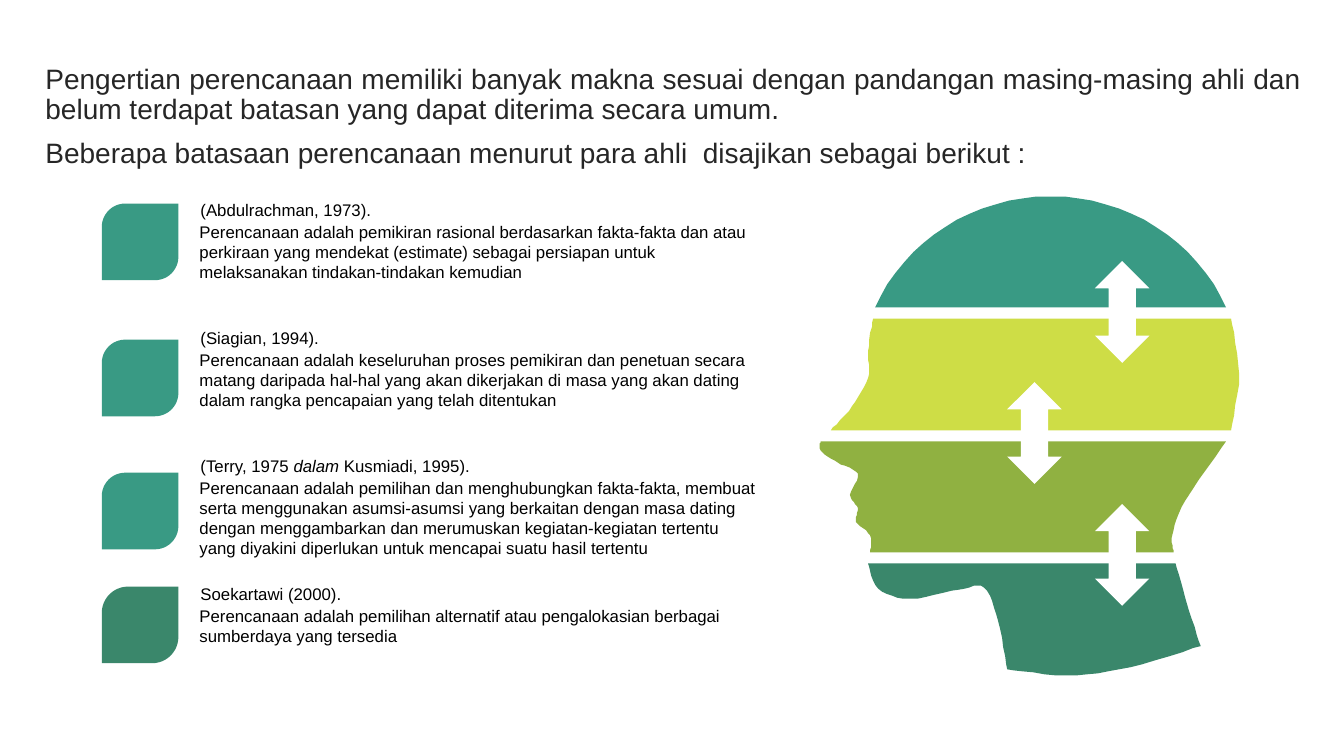
import math
import pptx
import pptx.util
import pptx.dml.color
import pptx.enum.shapes
import pptx.enum.text
import pptx.oxml.ns
import lxml.etree

Inches = pptx.util.Inches
SHAPE = pptx.enum.shapes.MSO_SHAPE

COLORS = {
    "teal": "399A84",
    "lime": "CEDD46",
    "olive": "90B141",
    "green": "3A876B",
    "white": "FFFFFF",
    "intro": "262626",
    "black": "000000",
}

INTRO = [
    "Pengertian perencanaan memiliki banyak makna sesuai dengan pandangan masing-masing ahli dan "
    "belum terdapat batasan yang dapat diterima secara umum.",
    "Beberapa batasaan perencanaan menurut para ahli  disajikan sebagai berikut :",
]

DEFINITIONS = [
    (0.09, "teal", 0.305, [("(Abdulrachman, 1973).", False)],
     "Perencanaan adalah pemikiran rasional berdasarkan fakta-fakta dan atau perkiraan yang mendekat "
     "(estimate) sebagai persiapan untuk melaksanakan tindakan-tindakan kemudian"),
    (0.17, "teal", 0.305, [("(Siagian, 1994).", False)],
     "Perencanaan adalah keseluruhan proses pemikiran dan penetuan secara matang daripada hal-hal yang "
     "akan dikerjakan di masa yang akan dating dalam rangka pencapaian yang telah ditentukan"),
    (0.22, "teal", 0.305,
     [("(Terry, 1975 ", False), ("dalam", True), (" Kusmiadi, 1995).", False)],
     "Perencanaan adalah pemilihan dan menghubungkan fakta-fakta, membuat serta menggunakan asumsi-asumsi "
     "yang berkaitan dengan masa dating dengan menggambarkan dan merumuskan kegiatan-kegiatan tertentu "
     "yang diyakini diperlukan untuk mencapai suatu hasil tertentu"),
    (0.08, "green", 0.343, [("Soekartawi (2000).", False)],
     "Perencanaan adalah pemilihan alternatif atau pengalokasian berbagai sumberdaya yang tersedia"),
]

LOWER_BANDS = [
    ("lime", [
        [(408, 121), (416, 176), (408, 232)],
        [(11, 232), (32, 208), (48, 180), (48, 153), (53, 121)]]),
    ("olive", [
        [(403, 243), (363, 301), (350, 335), (351, 353)],
        [(50, 353), (50, 336), (36, 323), (38, 309), (30, 296), (38, 275), (18, 264), (1, 252),
         (1, 243)]]),
    ("green", [
        [(353, 364), (364, 403), (378, 446)],
        [(378, 446), (308, 467), (245, 475), (186, 469)],
        [(186, 469), (177, 421), (163, 388), (138, 390), (90, 399), (58, 389), (48, 364)]]),
]

ARROWS = [(2.73, 0.64), (1.86, 1.84), (2.73, 3.05)]


def rgb(name):
    return pptx.dml.color.RGBColor.from_string(COLORS[name])


def paint(sp, color):
    sp.shadow.inherit = False
    sp.fill.solid()
    sp.fill.fore_color.rgb = rgb(color)
    sp.line.fill.background()


def add_run(p, text, size, color, italic=False):
    r = p.add_run()
    r.text = text
    r.font.name = "Arial"
    r.font.size = pptx.util.Pt(size)
    r.font.italic = italic
    r.font.color.rgb = rgb(color)


def add_text(s, left, top, width, height, runs):
    sp = s.shapes.add_textbox(Inches(left), Inches(top), Inches(width), Inches(height))
    tf = sp.text_frame
    tf.word_wrap = True
    for text, italic in runs:
        add_run(tf.paragraphs[0], text, 12, "black", italic)


def add_intro(s, left, top, width, height):
    sp = s.placeholders[1]
    sp.left, sp.top = Inches(left), Inches(top)
    sp.width, sp.height = Inches(width), Inches(height)
    tf = sp.text_frame
    tf.auto_size = pptx.enum.text.MSO_AUTO_SIZE.NONE
    tf.vertical_anchor = pptx.enum.text.MSO_ANCHOR.MIDDLE
    for i, text in enumerate(INTRO):
        p = tf.paragraphs[0] if i == 0 else tf.add_paragraph()
        p.alignment = pptx.enum.text.PP_ALIGN.JUSTIFY
        p.line_spacing = 0.9
        p.space_before = pptx.util.Pt(10)
        pPr = p._p.get_or_add_pPr()
        pPr.set("marL", "0")
        pPr.set("indent", "0")
        lxml.etree.SubElement(pPr, pptx.oxml.ns.qn("a:buNone"))
        add_run(p, text, 20, "intro")


def add_definitions(s, left, top, width, height):
    pitch = height / len(DEFINITIONS)
    text_left = left + 0.88
    text_width = width - 0.88
    for i, (tile_drop, color, rounding, source, definition) in enumerate(DEFINITIONS):
        y = top + i * pitch
        tile = s.shapes.add_shape(SHAPE.ROUND_2_DIAG_RECTANGLE, Inches(left), Inches(y + tile_drop),
                                  Inches(0.76), Inches(0.76))
        tile.adjustments[0] = rounding
        paint(tile, color)
        add_text(s, text_left, y, text_width, 0.3, source)
        add_text(s, text_left - 0.01, y + 0.22, text_width - 0.01, 0.71, [(definition, False)])


def dome_points(cx, cy, rx, ry, base, steps=32):
    start = math.asin((cy - base) / ry)
    angles = [start + (math.pi - 2 * start) * i / steps for i in range(steps + 1)]
    return [(cx + rx * math.cos(a), cy - ry * math.sin(a)) for a in angles]


def smooth(knots, steps=6):
    padded = [knots[0]] + knots + [knots[-1]]
    points = [knots[0]]
    for a, b, c, d in zip(padded, padded[1:], padded[2:], padded[3:]):
        for t in [i / steps for i in range(1, steps + 1)]:
            points.append(tuple(
                q + t * (r - p) / 2 + t ** 2 * (p - 2.5 * q + 2 * r - u / 2)
                + t ** 3 * (1.5 * (q - r) + (u - p) / 2)
                for p, q, r, u in zip(a, b, c, d)))
    return points


def add_head(s, left, top):
    bands = [("teal", dome_points(229, 180, 189, 180, 110))]
    for color, curves in LOWER_BANDS:
        bands.append((color, [point for knots in curves for point in smooth(knots)]))
    for color, points in bands:
        fb = s.shapes.build_freeform(*points[0], scale=Inches(0.01))
        fb.add_line_segments(points[1:], close=True)
        paint(fb.convert_to_shape(Inches(left), Inches(top)), color)
    for x, y in ARROWS:
        arrow = s.shapes.add_shape(SHAPE.UP_DOWN_ARROW, Inches(left + x), Inches(top + y),
                                   Inches(0.54), Inches(1.01))
        paint(arrow, "white")


def main():
    prs = pptx.Presentation()
    prs.slide_width, prs.slide_height = Inches(13.33), Inches(7.5)
    s = prs.slides.add_slide(prs.slide_layouts[1])
    title = s.shapes.title.element
    title.getparent().remove(title)
    add_intro(s, 0.35, 0.37, 12.66, 1.59)
    add_definitions(s, 1.01, 1.93, 6.64, 5.08)
    add_head(s, 8.13, 1.95)
    prs.save("out.pptx")


if __name__ == "__main__":
    main()
